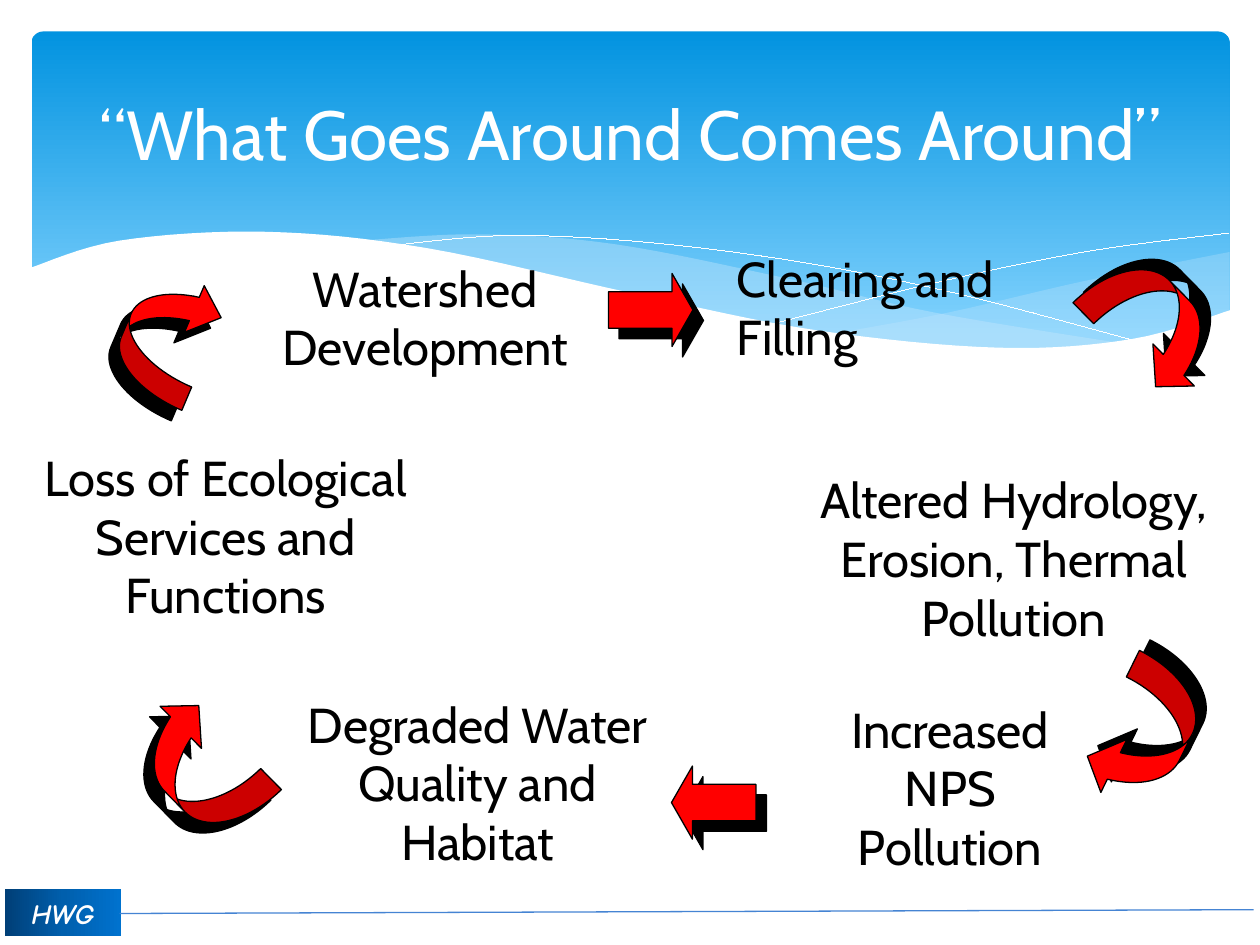
import copy

import lxml.etree
import pptx
import pptx.dml.color
import pptx.enum.shapes
import pptx.enum.text
import pptx.oxml.ns
import pptx.util

Inches, Pt, qn = pptx.util.Inches, pptx.util.Pt, pptx.oxml.ns.qn
Shape = pptx.enum.shapes.MSO_SHAPE
Align = pptx.enum.text.PP_ALIGN

COLORS = {"white": "FFFFFF", "black": "000000", "red": "FF0000",
          "wave": "C6E7FC", "rule": "4584D3",
          "sky top": "0293E0", "sky bottom": "83D3FE",
          "navy left": "003F77", "navy middle": "005FAD", "navy right": "0072CE"}
SKY = [(0, "sky top"), (90, "sky bottom")]
NAVY = [(0, "navy left"), (50, "navy middle"), (100, "navy right")]
FONT = "Cabin"
HAIRLINE = 0.01

TITLE = "“What Goes Around Comes Around”"
BADGE = "HWG"

# The cycle, clockwise: text, (left, top, width, height), alignment
STAGES = [
    ("Watershed Development", (2, 2, 2.75, 1.03), Align.CENTER),
    ("Clearing and Filling", (5.75, 1.92, 2.83, 1.04), Align.LEFT),
    ("Altered Hydrology, Erosion, Thermal Pollution", (6.33, 3.68, 3.43, 1.51), Align.CENTER),
    ("Increased NPS Pollution", (6.33, 5.5, 2.42, 1.5), Align.CENTER),
    ("Degraded Water Quality and Habitat", (2.25, 5.46, 3.08, 1.51), Align.CENTER),
    ("Loss of Ecological Services and Functions", (0, 3.5, 3.58, 1.51), Align.CENTER),
]

# Arrow kinds: preset, (width, height), adjustments
STRAIGHT = (Shape.RIGHT_ARROW, (0.67, 0.58), (0.5, 0.286))
CURVED_DOWN = (Shape.CURVED_DOWN_ARROW, (1.17, 0.67), (0.35, 0.7, 0.333))
CURVED_UP = (Shape.CURVED_UP_ARROW, (1, 0.67), (0.3, 0.6, 0.333))
SHADOW_ANGLES = {"down right": 45, "down left": 135, "up right": 315}
# The arrow after each stage: kind, (left, top), rotation, flipped axes, shadow
ARROWS = [
    (STRAIGHT, (4.83, 2.17), 0, "", "down right"),
    (CURVED_DOWN, (8.58, 2.25), 45.5, "", "up right"),
    (CURVED_DOWN, (8.5, 5.5), 116.2, "", "up right"),
    (STRAIGHT, (5.33, 6.08), 0, "H", "down right"),
    (CURVED_DOWN, (1, 5.75), 45.5, "HV", "down left"),
    (CURVED_UP, (0.83, 2.33), 113, "H", "down left"),
]

# Each edge is a smooth curve through a few knots; a filled wave joins its edges.
RIGHT_TOP = [(9.76, 2), (8.61, 2.23), (7.53, 2.48), (6.61, 2.65)]
RIGHT_BOTTOM = [(6.61, 2.65), (7.32, 2.74), (8.14, 2.78), (8.97, 2.7), (9.76, 2.47)]
MIDDLE_TOP = [(2.86, 1.91), (3.8, 1.86), (4.89, 1.94), (6.29, 2.22), (7.41, 2.48), (8.93, 2.73)]
MIDDLE_BOTTOM = [(8.93, 2.73), (8.07, 2.79), (6.95, 2.7), (5.66, 2.48), (4.49, 2.22), (2.86, 1.91)]
LONG_CREST = [(3.09, 1.95), (4.01, 1.87), (5.1, 1.92), (6.36, 2.08), (7.6, 2.33), (9.07, 2.72)]
SHORT_CREST = [(6.13, 2.57), (7.48, 2.23), (8.66, 1.99), (9.75, 1.85)]
FRONT_TOP = [(0.23, 2.13), (0.95, 1.91), (2.11, 1.84), (3.39, 1.97), (5.03, 2.33),
             (6.47, 2.62), (7.93, 2.76), (8.99, 2.69), (9.77, 2.46)]
FRONT_BOTTOM = [(9.77, 3.29), (0.23, 3.29)]
# edges, fill colour, opacity in percent
FILLED_WAVES = [
    ([RIGHT_TOP, RIGHT_BOTTOM], "wave", 29),
    ([MIDDLE_TOP, MIDDLE_BOTTOM], "wave", 40),
]
CRESTS = [LONG_CREST, SHORT_CREST]
FRONT_WAVE = ([FRONT_TOP, FRONT_BOTTOM], "white", 100)


def rgb(name):
    return pptx.dml.color.RGBColor.from_string(COLORS[name])


def paint(shape, name, opacity=100):
    shape.fill.solid()
    shape.fill.fore_color.rgb = rgb(name)
    if opacity < 100:
        color = shape._element.spPr.find(qn("a:solidFill"))[0]
        lxml.etree.SubElement(color, qn("a:alpha"), val=str(opacity * 1000))


def outline(shape, name, width):
    shape.line.color.rgb = rgb(name)
    shape.line.width = Pt(width)


def paint_gradient(shape, stops, angle):
    """Fill with (percent, colour) stops; the angle runs counter-clockwise."""
    shape.fill.gradient()
    shape.fill.gradient_angle = angle
    stop_list = shape._element.spPr.find(qn("a:gradFill")).find(qn("a:gsLst"))
    while len(stop_list) < len(stops):
        stop_list.append(copy.deepcopy(stop_list[0]))
    for stop, (percent, color) in zip(shape.fill.gradient_stops, stops):
        stop.color.rgb = rgb(color)
        stop.position = percent / 100


def smooth(knots, steps=8):
    """Return points of a Catmull-Rom curve that passes through all knots."""
    padded = [knots[0], *knots, knots[-1]]
    points = [knots[0]]
    for before, start, end, after in zip(padded, padded[1:], padded[2:], padded[3:]):
        for step in range(1, steps + 1):
            t = step / steps
            points.append(tuple(
                b + t * (c - a) / 2
                + t ** 2 * (2 * a - 5 * b + 4 * c - d) / 2
                + t ** 3 * (3 * b - a - 3 * c + d) / 2
                for a, b, c, d in zip(before, start, end, after)))
    return points


def add_outline(shapes, edges, close):
    points = [tuple(map(Inches, point)) for edge in edges for point in smooth(edge)]
    builder = shapes.build_freeform(*points[0])
    builder.add_line_segments(points[1:], close=close)
    shape = builder.convert_to_shape()
    shape.shadow.inherit = False
    return shape


def add_filled_wave(shapes, edges, color, opacity):
    wave = add_outline(shapes, edges, close=True)
    paint(wave, color, opacity)
    wave.line.fill.background()


def add_crest(shapes, knots):
    crest = add_outline(shapes, [knots], close=False)
    crest.fill.background()
    outline(crest, "white", HAIRLINE)


def add_plain_shape(shapes, kind, place):
    shape = shapes.add_shape(kind, *map(Inches, place))
    shape.shadow.inherit = False
    shape.line.fill.background()
    return shape


def write(frame, text, size, color, font=FONT, align=Align.CENTER):
    frame.word_wrap = True
    para = frame.paragraphs[0]
    para.text = text
    para.alignment = align
    para.font.size = Pt(size)
    para.font.name = font
    para.font.color.rgb = rgb(color)
    return para


def add_stage(shapes, text, place, align):
    box = shapes.add_textbox(*map(Inches, place))
    write(box.text_frame, text, 28, "black", align=align)
    box.text_frame.auto_size = pptx.enum.text.MSO_AUTO_SIZE.SHAPE_TO_FIT_TEXT


def add_arrow(shapes, kind, corner, rotation, flipped_axes, shadow_side):
    preset, size, adjustments = kind
    arrow = add_plain_shape(shapes, preset, corner + size)
    for index, value in enumerate(adjustments):
        arrow.adjustments[index] = value
    arrow.rotation = rotation
    for axis in flipped_axes:
        arrow._element.spPr.find(qn("a:xfrm")).set("flip" + axis, "1")
    paint(arrow, "red")
    outline(arrow, "black", 0.75)
    effects = arrow._element.spPr.find(qn("a:effectLst"))
    shadow = lxml.etree.SubElement(
        effects, qn("a:outerShdw"), dist=str(Pt(8.5)),
        dir=str(SHADOW_ANGLES[shadow_side] * 60000), algn="ctr", rotWithShape="0")
    lxml.etree.SubElement(shadow, qn("a:srgbClr"), val=COLORS["black"])


def add_backdrop(shapes):
    banner = add_plain_shape(shapes, Shape.ROUNDED_RECTANGLE, (0.25, 0.25, 9.51, 2.7))
    banner.adjustments[0] = 0.034
    paint_gradient(banner, SKY, 270)
    for wave in FILLED_WAVES:
        add_filled_wave(shapes, *wave)
    for crest in CRESTS:
        add_crest(shapes, crest)
    add_filled_wave(shapes, *FRONT_WAVE)


def add_footer(shapes):
    badge = add_plain_shape(shapes, Shape.RECTANGLE, (0.04, 7.06, 0.92, 0.37))
    paint_gradient(badge, NAVY, 0)
    label = write(badge.text_frame, BADGE, 16, "white", "Comic Neue")
    label.font.bold = label.font.italic = True
    rule = shapes.add_connector(pptx.enum.shapes.MSO_CONNECTOR.STRAIGHT,
                                *map(Inches, (0.95, 7.25, 9.95, 7.22)))
    outline(rule, "rule", 0.75)
    lxml.etree.SubElement(rule._element.spPr, qn("a:effectLst"))


def place_title(shapes):
    title = shapes.title
    title.left, title.top, title.width, title.height = map(Inches, (0.5, 0.37, 9, 1.37))
    title.text_frame.vertical_anchor = pptx.enum.text.MSO_ANCHOR.MIDDLE
    write(title.text_frame, TITLE, 39.6, "white")
    shapes._spTree.append(title._element)  # in front of the banner


def main():
    deck = pptx.Presentation()
    deck.slide_width, deck.slide_height = Inches(10), Inches(7.5)
    shapes = deck.slides.add_slide(deck.slide_layouts[5]).shapes
    add_backdrop(shapes)
    add_footer(shapes)
    place_title(shapes)
    for stage, arrow in zip(STAGES, ARROWS):
        add_stage(shapes, *stage)
        add_arrow(shapes, *arrow)
    deck.save("out.pptx")


if __name__ == "__main__":
    main()
